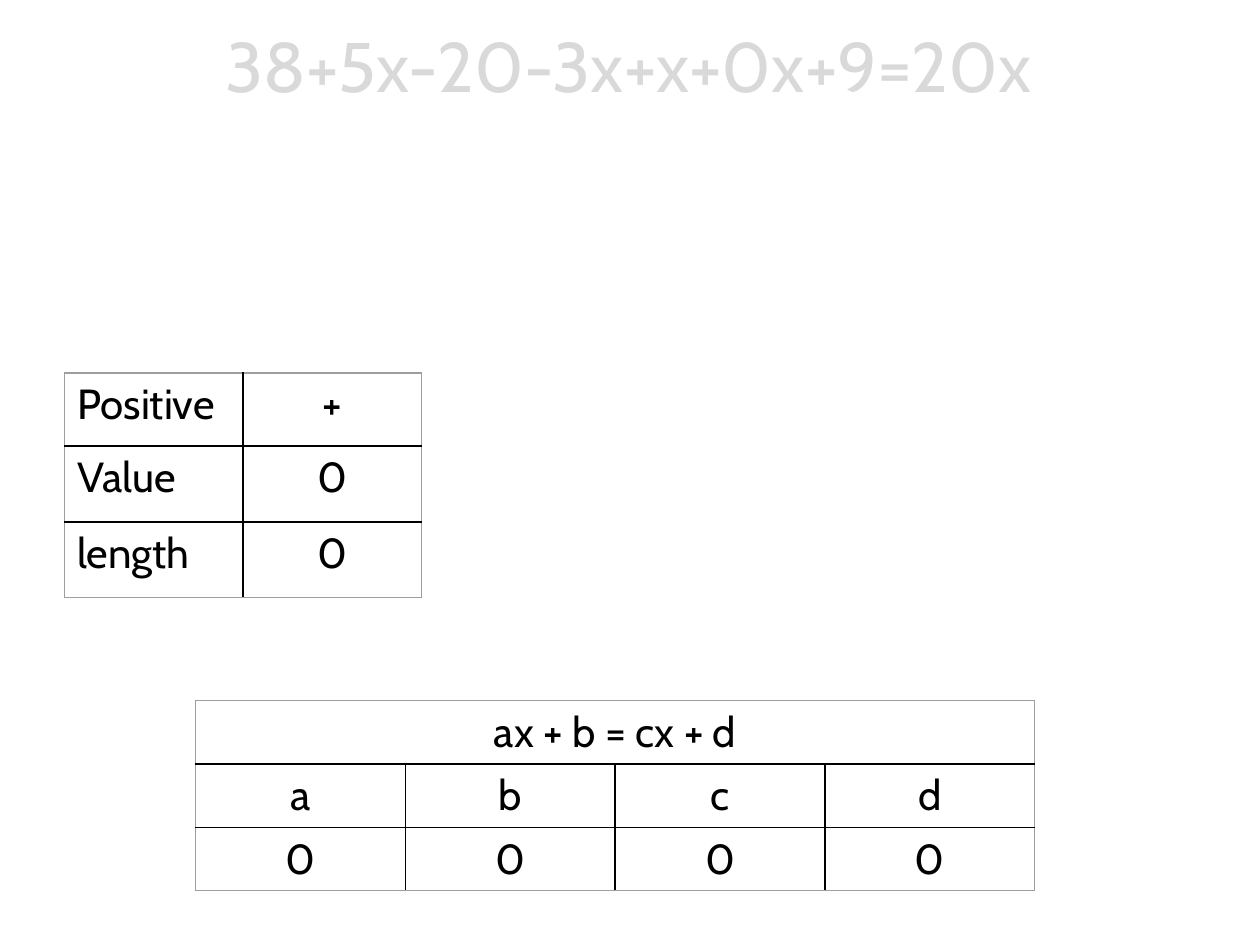
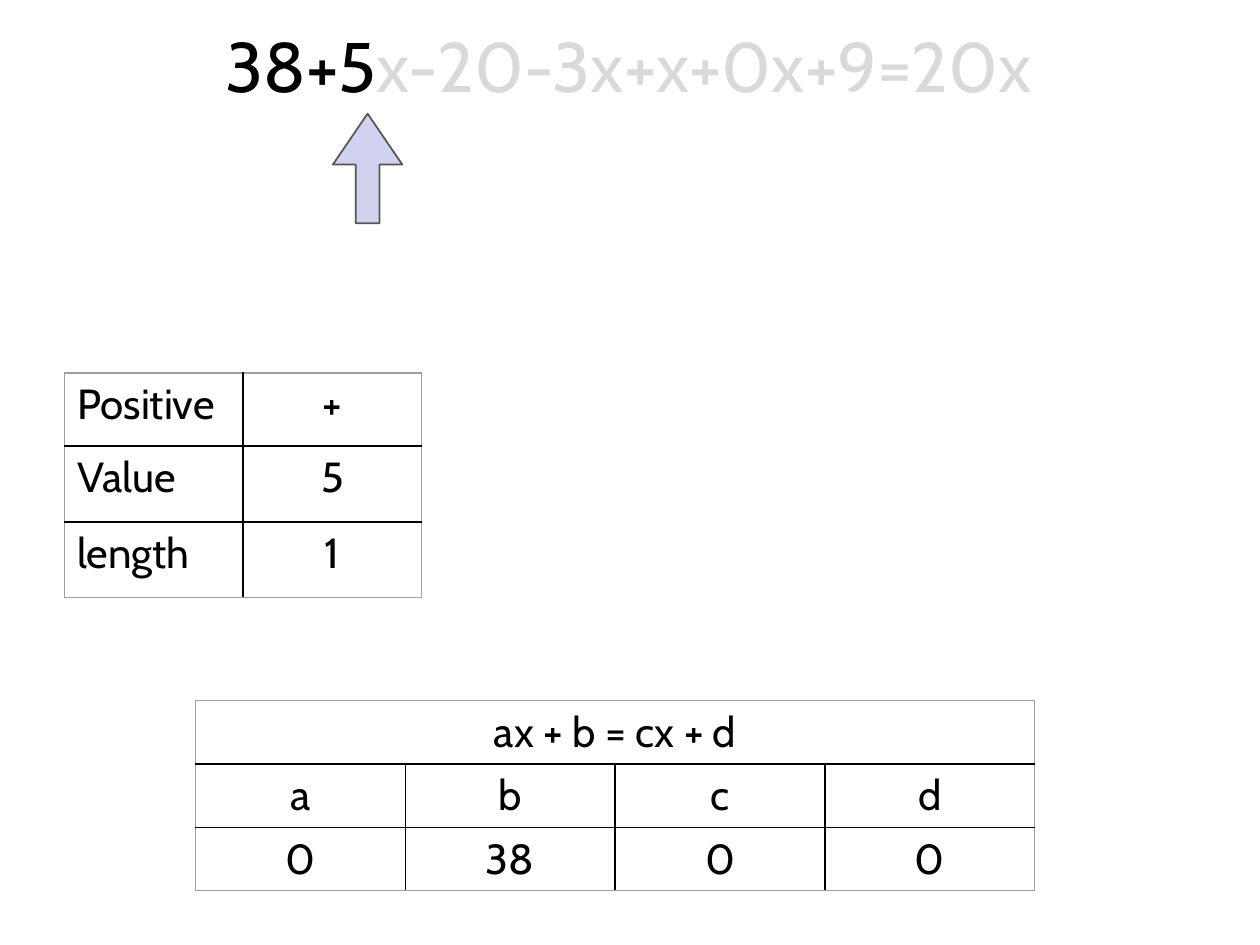
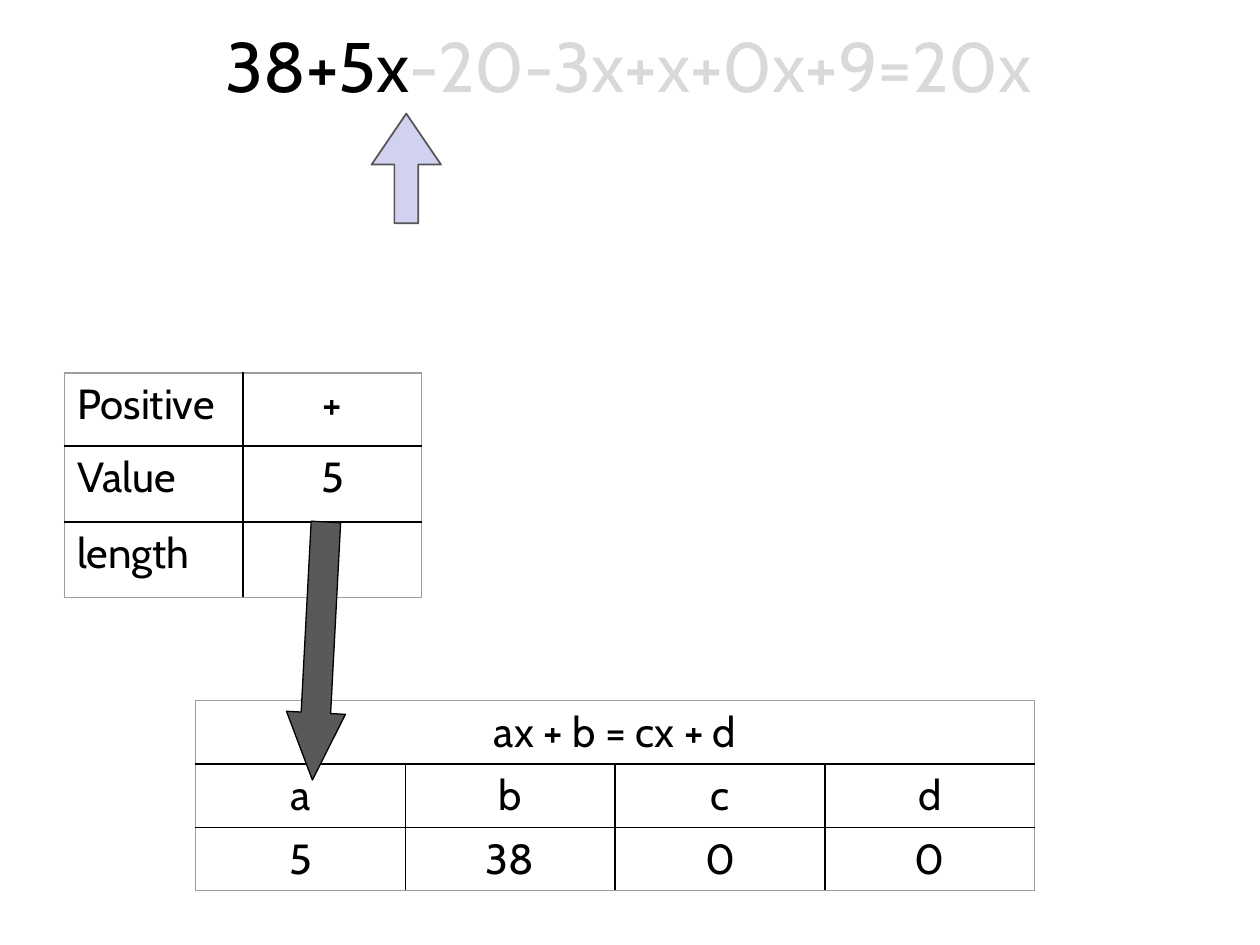
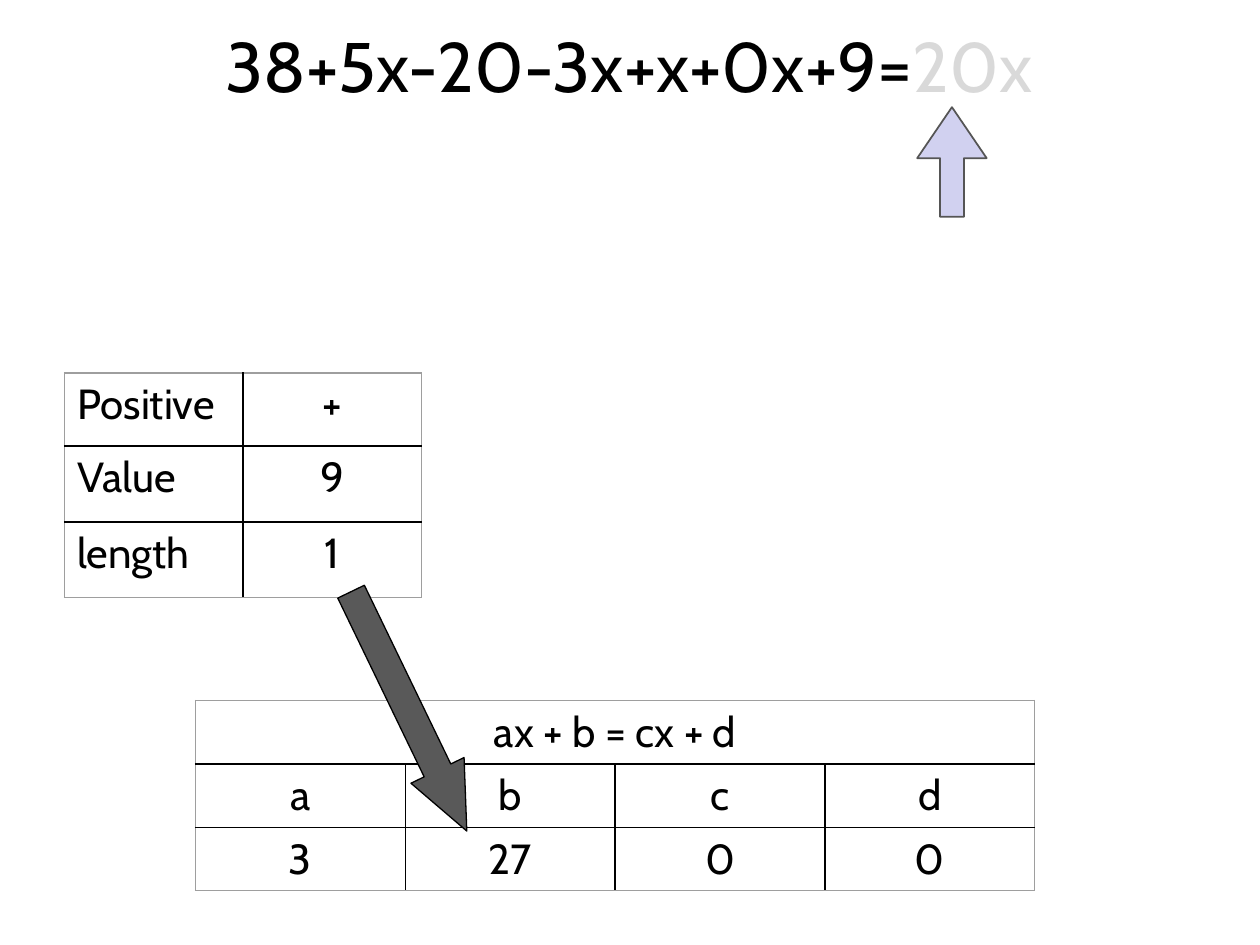
from lxml.etree import SubElement
from pptx import Presentation
from pptx.dml.color import RGBColor
from pptx.enum.shapes import MSO_SHAPE
from pptx.enum.text import MSO_ANCHOR, MSO_AUTO_SIZE, PP_ALIGN
from pptx.oxml import parse_xml
from pptx.oxml.ns import nsdecls
from pptx.util import Cm, Pt

BLACK = RGBColor(0x00, 0x00, 0x00)
UNREAD_GREY = RGBColor(0xD9, 0xD9, 0xD9)
FRAME_GREY = RGBColor(0x9E, 0x9E, 0x9E)
POINTER_LILAC = RGBColor(0xD1, 0xD1, 0xF0)
POINTER_LINE = RGBColor(0x55, 0x55, 0x55)
TRANSFER_GREY = RGBColor(0x59, 0x59, 0x59)

FONT = "Cabin"
EQUATION = "38+5x-20-3x+x+0x+9=20x"
TITLE_ONLY = 5

POINTER = {"fill": POINTER_LILAC, "line": POINTER_LINE, "weight": 1,
           "adjustments": (0.344, 0.734)}
TRANSFER = {"fill": TRANSFER_GREY, "line": BLACK, "weight": 0.75,
            "adjustments": (0.5, 1.141)}

# Each step: characters read, value and length of the current term,
# coefficients a to d, pointer (left, top), transfer arrow (box, rotation).
STEPS = [
    {"read": "", "term": ("0", "0"), "coefficients": "0 0 0 0"},
    {"read": "38+5", "term": ("5", "1"), "coefficients": "0 38 0 0",
     "pointer": (6.71, 2.29)},
    {"read": "38+5x", "term": ("5", "1"), "coefficients": "5 38 0 0",
     "pointer": (7.49, 2.29), "transfer": ((5.84, 10.52, 1.19, 5.21), 3)},
    {"read": "38+5x-20-3x+x+0x+9=", "term": ("9", "1"),
     "coefficients": "3 27 0 0", "pointer": (18.49, 2.16),
     "transfer": ((7.65, 11.66, 1.19, 5.36), 334.2)},
]


def apply_format(target, values):
    for name, value in values.items():
        setattr(target, name, value)


def add_span(para, text, size, color):
    span = para.add_run()
    span.text = text
    apply_format(span.font, {"name": FONT, "size": Pt(size), "bold": False})
    span.font.color.rgb = color


def add_equation(page, read):
    """Show the equation with the part already read in black."""
    title = page.shapes.title
    apply_format(title, {"left": Cm(4.29), "top": Cm(0.33),
                         "width": Cm(18.01), "height": Cm(1.96)})
    apply_format(title.text_frame, {
        "word_wrap": False, "auto_size": MSO_AUTO_SIZE.SHAPE_TO_FIT_TEXT,
        "vertical_anchor": MSO_ANCHOR.TOP})
    para = title.text_frame.paragraphs[0]
    para.alignment = PP_ALIGN.LEFT
    for text, color in ((read, BLACK), (EQUATION[len(read):], UNREAD_GREY)):
        if text:
            add_span(para, text, 40, color)


def set_borders(cell, outer_sides):
    """Draw grey lines on the outer sides and black ones on the others."""
    properties = cell._tc.get_or_add_tcPr()
    for position, side in enumerate("LRTB"):
        outer = side in outer_sides
        width = Pt(0.75 if outer else 1)
        line = parse_xml(f'<a:ln{side} {nsdecls("a")} w="{width}"/>')
        fill = SubElement(line, line.tag.replace(f"ln{side}", "solidFill"))
        color = SubElement(fill, line.tag.replace(f"ln{side}", "srgbClr"))
        color.set("val", str(FRAME_GREY if outer else BLACK))
        properties.insert(position, line)


def add_grid(page, left, top, column_width, row_heights, rows, label_column=False):
    """Add a table; a row with a single text spans all columns."""
    row_count, column_count = len(rows), max(map(len, rows))
    table = page.shapes.add_table(
        row_count, column_count, Cm(left), Cm(top),
        Cm(column_width * column_count), Cm(sum(row_heights))).table
    apply_format(table, {"first_row": False, "horz_banding": False})
    for column in table.columns:
        column.width = Cm(column_width)
    for r, texts in enumerate(rows):
        table.rows[r].height = Cm(row_heights[r])
        if len(texts) == 1:
            table.cell(r, 0).merge(table.cell(r, column_count - 1))
        for c, text in enumerate(texts):
            cell = table.cell(r, c)
            cell.fill.background()
            edges = {"L": c == 0, "R": c == len(texts) - 1,
                     "T": r == 0, "B": r == row_count - 1}
            set_borders(cell, [side for side, outer in edges.items() if outer])
            para = cell.text_frame.paragraphs[0]
            is_label = label_column and c == 0
            para.alignment = PP_ALIGN.LEFT if is_label else PP_ALIGN.CENTER
            add_span(para, text, 24, BLACK)


def add_arrow(page, box, rotation, style):
    arrow = page.shapes.add_shape(MSO_SHAPE.DOWN_ARROW, *map(Cm, box))
    arrow.rotation = rotation
    arrow.shadow.inherit = False
    for index, value in enumerate(style["adjustments"]):
        arrow.adjustments[index] = value
    arrow.fill.solid()
    arrow.fill.fore_color.rgb = style["fill"]
    arrow.line.color.rgb = style["line"]
    arrow.line.width = Pt(style["weight"])


def add_step(deck, step):
    page = deck.slides.add_slide(deck.slide_layouts[TITLE_ONLY])
    add_equation(page, step["read"])
    value, length = step["term"]
    add_grid(page, 3.94, 14.12, 4.23, [1.28] * 3,
             [["ax + b = cx + d"], list("abcd"), step["coefficients"].split()])
    add_grid(page, 1.3, 7.52, 3.6, [1.47, 1.53, 1.53],
             [["Positive", "+"], ["Value", value], ["length", length]],
             label_column=True)
    if "pointer" in step:
        add_arrow(page, (*step["pointer"], 1.4, 2.21), 180, POINTER)
    if "transfer" in step:
        add_arrow(page, *step["transfer"], TRANSFER)


def main():
    deck = Presentation()
    apply_format(deck, {"slide_width": Cm(25.4), "slide_height": Cm(19.05)})
    for step in STEPS:
        add_step(deck, step)
    deck.save("out.pptx")


if __name__ == "__main__":
    main()
